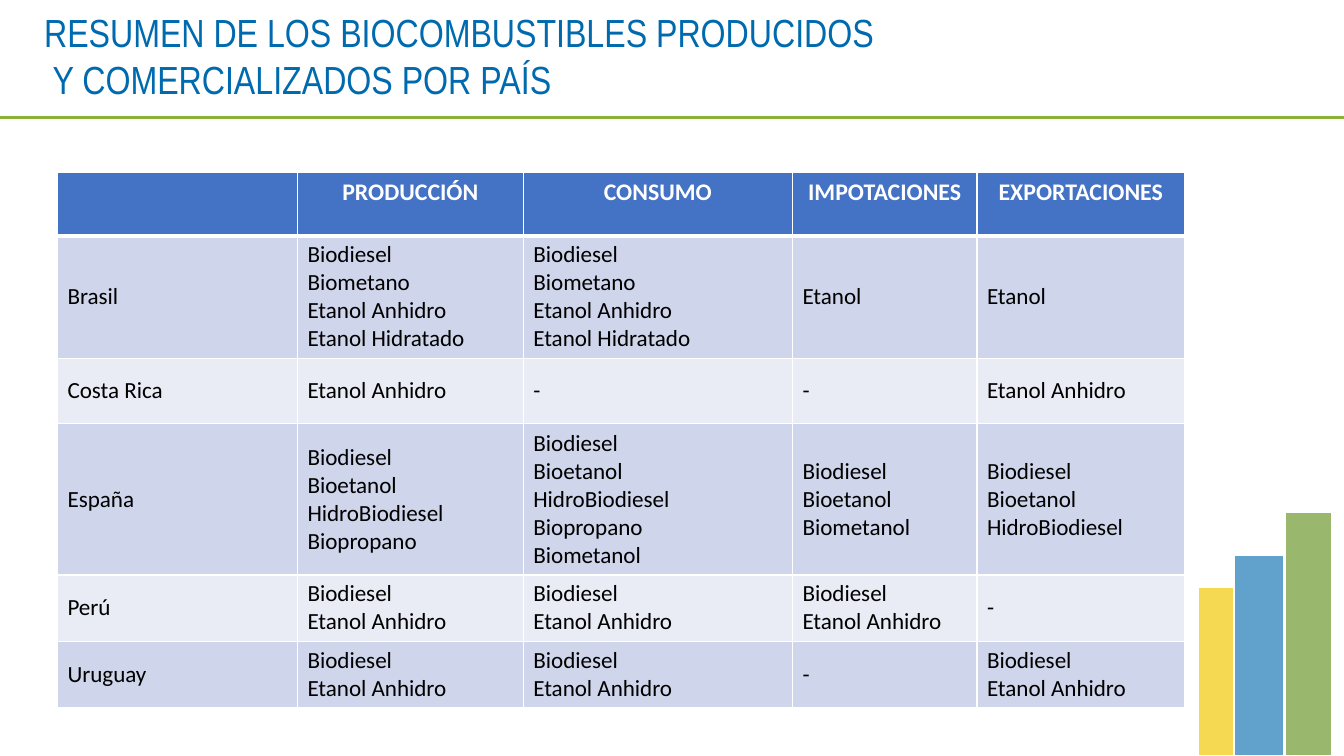
import pptx
import pptx.util
import pptx.dml.color
import pptx.enum.text
import pptx.enum.shapes
import pptx.oxml
import pptx.oxml.ns

# Content
TITLE = "RESUMEN DE LOS BIOCOMBUSTIBLES PRODUCIDOS\v Y COMERCIALIZADOS POR PAÍS"
HEADS = ["", "PRODUCCIÓN", "CONSUMO", "IMPOTACIONES", "EXPORTACIONES"]
MIX = "Biodiesel\nEtanol Anhidro"
BRAZIL = "Biodiesel\nBiometano\nEtanol Anhidro\nEtanol Hidratado"
TRIO = "Biodiesel\nBioetanol\nHidroBiodiesel"
SPAIN = TRIO + "\nBiopropano"
ROWS = [
    ["Brasil", BRAZIL, BRAZIL, "Etanol", "Etanol"],
    ["Costa Rica", "Etanol Anhidro", "-", "-", "Etanol Anhidro"],
    ["España", SPAIN, SPAIN + "\nBiometanol",
     "Biodiesel\nBioetanol\nBiometanol", TRIO],
    ["Perú", MIX, MIX, MIX, "-"],
    ["Uruguay", MIX, MIX, "-", MIX],
]
COLORS = {"title": "006AAF", "rule": "8BB236", "head": "4472C4",
          "odd": "CFD5EA", "even": "E9EBF5", "white": "FFFFFF",
          "black": "000000", "yellow": "F3C700", "blue": "006AAF",
          "green": "61911B"}
# Bars: left, width, height, colour, opacity in percent
BARS = [(12.75, 0.46, 2.42, "green", 64),
        (12.24, 0.49, 1.99, "blue", 62),
        (11.89, 0.34, 1.67, "yellow", 68)]

# Grid in inches
WIDE, HIGH = 13.33, 7.5
RULE = 1.17
LEFT, TOP = 0.57, 1.71
COLS = [2.38, 2.24, 2.67, 1.83, 2.06]
TALL = [0.63, 1.21, 0.65, 1.5, 0.65, 0.65]

inch = pptx.util.Inches
point = pptx.util.Pt


def tint(name):
    return pptx.dml.color.RGBColor.from_string(COLORS[name])


def style(frame, size, font, color, bold=False):
    for para in frame.paragraphs:
        for run in para.runs:
            run.font.size = point(size)
            run.font.name = font
            run.font.bold = bold
            run.font.color.rgb = tint(color)


def edge(cell, base):
    """White cell borders, with the given width in points below."""
    props = cell._tc.get_or_add_tcPr()
    for spot, side in enumerate("LRTB"):
        width = point(base if side == "B" else 1)
        props.insert(spot, pptx.oxml.parse_xml(
            f'<a:ln{side} {pptx.oxml.ns.nsdecls("a")} w="{width}"><a:solidFill>'
            f'<a:srgbClr val="{COLORS["white"]}"/></a:solidFill></a:ln{side}>'))


deck = pptx.Presentation()
deck.slide_width, deck.slide_height = inch(WIDE), inch(HIGH)
slide = deck.slides.add_slide(deck.slide_layouts[6])
shapes = slide.shapes

# Green rule
rule = shapes.add_connector(pptx.enum.shapes.MSO_CONNECTOR.STRAIGHT,
                            0, inch(RULE), inch(WIDE), inch(RULE))
rule.line.color.rgb = tint("rule")
rule.line.width = point(2.25)
rule._element.spPr.append(pptx.oxml.parse_xml(
    f'<a:effectLst {pptx.oxml.ns.nsdecls("a")}/>'))

# Corner bars standing on the bottom edge
for left, width, height, color, clear in BARS:
    bar = shapes.add_shape(pptx.enum.shapes.MSO_SHAPE.RECTANGLE, inch(left),
                           inch(HIGH - height), inch(width), inch(height))
    bar.shadow.inherit = False
    bar.fill.solid()
    bar.fill.fore_color.rgb = tint(color)
    shade = bar._element.spPr.find(".//" + pptx.oxml.ns.qn("a:srgbClr"))
    shade.append(pptx.oxml.parse_xml(
        f'<a:alpha {pptx.oxml.ns.nsdecls("a")} val="{clear * 1000}"/>'))
    bar.line.color.rgb = tint("white")
    bar.line.width = point(0.75)

# Table
grid = shapes.add_table(len(TALL), len(COLS), inch(LEFT), inch(TOP),
                        inch(sum(COLS)), inch(sum(TALL))).table
for col, width in zip(grid.columns, COLS):
    col.width = inch(width)
for row, height in zip(grid.rows, TALL):
    row.height = inch(height)
for r, texts in enumerate([HEADS] + ROWS):
    for c, text in enumerate(texts):
        cell = grid.cell(r, c)
        cell.text_frame.text = text
        cell.fill.solid()
        if r == 0:
            cell.fill.fore_color.rgb = tint("head")
            cell.text_frame.paragraphs[0].alignment = pptx.enum.text.PP_ALIGN.CENTER
            style(cell.text_frame, 17, "Calibri", "white", True)
        else:
            cell.fill.fore_color.rgb = tint("odd" if r % 2 else "even")
            cell.vertical_anchor = pptx.enum.text.MSO_ANCHOR.MIDDLE
            style(cell.text_frame, 16.5, "Calibri", "black")
        edge(cell, 1 if r else 3)

# Title
title = shapes.add_textbox(inch(0.34), inch(0.03), inch(8.54), inch(1.04))
frame = title.text_frame
frame.text = TITLE
frame.word_wrap = False
frame.auto_size = pptx.enum.text.MSO_AUTO_SIZE.SHAPE_TO_FIT_TEXT
style(frame, 28, "Arial Narrow", "title")

deck.save("out.pptx")
